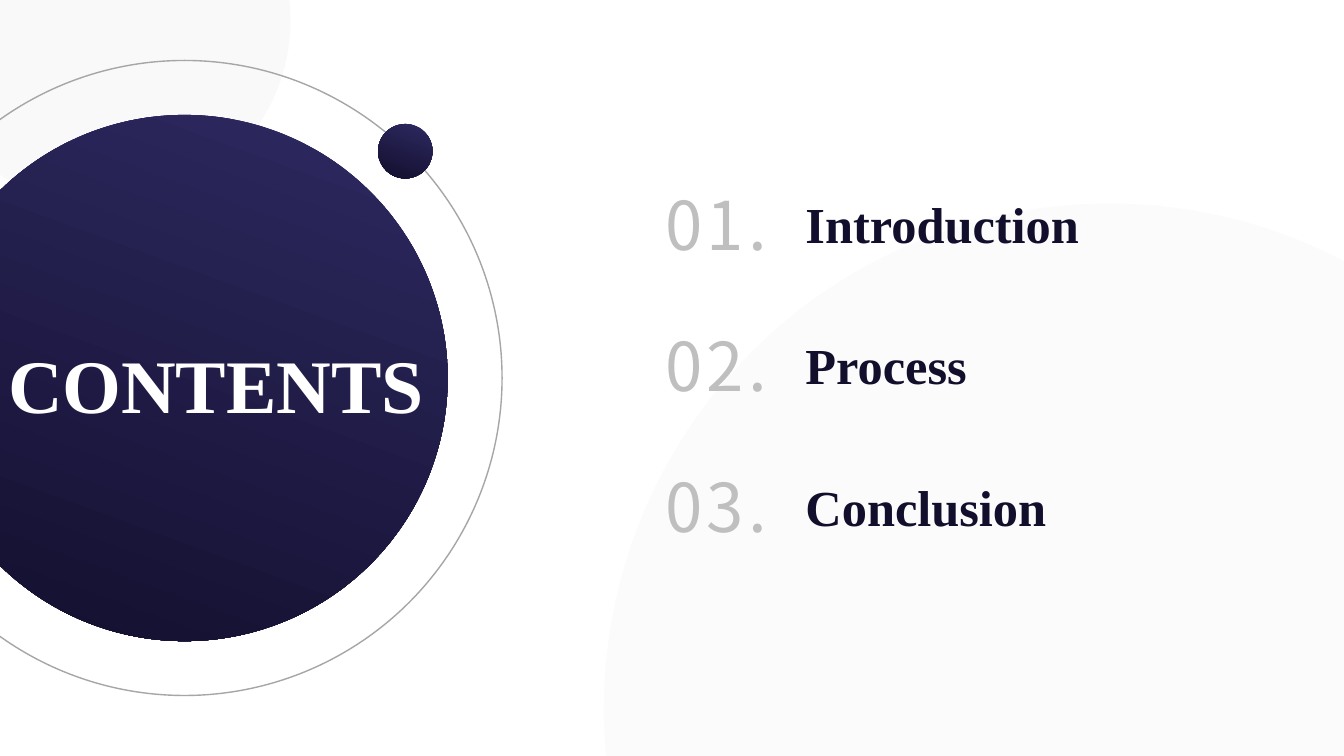
from dataclasses import dataclass

from lxml.etree import SubElement
from pptx import Presentation
from pptx.dml.color import RGBColor
from pptx.enum.shapes import MSO_SHAPE
from pptx.enum.text import MSO_AUTO_SIZE
from pptx.oxml.ns import qn
from pptx.util import Inches, Pt


@dataclass(frozen=True)
class Theme:
    """Colours, fonts and type sizes of the slide."""
    pale: str = "F2F2F2"
    light: str = "2E2961"
    dark: str = "120F2D"
    ring: str = "A6A6A6"
    number: str = "BFBFBF"
    white: str = "FFFFFF"
    serif: str = "Times New Roman"
    sans: str = "Noto Sans CJK SC"
    title: int = 54
    index: int = 48
    item: int = 36


THEME = Theme()


def add_disc(slide, left, top, size):
    """Add a bare circle without fill, line or shadow."""
    disc = slide.shapes.add_shape(
        MSO_SHAPE.OVAL, Inches(left), Inches(top), Inches(size), Inches(size))
    disc.shadow.inherit = False
    disc.fill.background()
    disc.line.fill.background()
    return disc


def add_tint(slide, left, top, size, alpha):
    """Add a pale circle with the given opacity in percent."""
    fill = add_disc(slide, left, top, size).fill
    fill.solid()
    fill.fore_color.rgb = RGBColor.from_string(THEME.pale)
    color = fill._xPr.find(qn("a:solidFill"))[0]
    SubElement(color, qn("a:alpha")).set("val", str(alpha * 1000))


def add_globe(slide, left, top, size):
    """Add a circle shaded from light to dark."""
    fill = add_disc(slide, left, top, size).fill
    fill.gradient()
    fill.gradient_angle = 250
    for stop, color in zip(fill.gradient_stops, (THEME.light, THEME.dark)):
        stop.color.rgb = RGBColor.from_string(color)


def add_label(slide, box, text, font, size, color, bold=True, inset=True):
    """Add one line of text in a box and return its run."""
    label = slide.shapes.add_textbox(*map(Inches, box))
    frame = label.text_frame
    frame.word_wrap = True
    frame.auto_size = MSO_AUTO_SIZE.SHAPE_TO_FIT_TEXT
    if not inset:
        frame.margin_left = frame.margin_right = 0
        frame.margin_top = frame.margin_bottom = 0
    frame.text = text
    run = frame.paragraphs[0].runs[0]
    run.font.name = font
    run.font.size = Pt(size)
    run.font.bold = bold
    run.font.color.rgb = RGBColor.from_string(color)
    return run


def add_backdrop(slide):
    """Add the two pale circles behind the content."""
    add_tint(slide, -0.81, -1.64, 3.69, 44)
    add_tint(slide, 5.99, 2.02, 10.03, 29)


def add_emblem(slide, left, top, size, title):
    """Add the ringed globe, its moon and the title in a square box."""
    gap = 0.54
    add_globe(slide, left + gap, top + gap, size - 2 * gap)
    ring = add_disc(slide, left, top, size)
    ring.line.color.rgb = RGBColor.from_string(THEME.ring)
    ring.line.width = Pt(1)
    add_globe(slide, left + 5.07, top + 0.63, gap)
    add_label(slide, (left + 1.4, top + 2.75, 4.3, 0.91), title,
              THEME.serif, THEME.title, THEME.white, inset=False)


def add_agenda(slide, left, top, pitch, items):
    """Add the numbered items, one row per pitch."""
    for place, item in enumerate(items):
        row = top + place * pitch
        run = add_label(slide, (left, row, 1.38, 0.91), f"{place + 1:02}.",
                        THEME.sans, THEME.index, THEME.number, bold=False)
        run.font._element.set("spc", "300")
        add_label(slide, (left + 1.39, row + 0.1, 3.24, 0.71), item,
                  THEME.serif, THEME.item, THEME.dark)


def main():
    """Build the contents slide and save it."""
    deck = Presentation()
    deck.slide_width = Inches(13.33)
    deck.slide_height = Inches(7.5)
    slide = deck.slides.add_slide(deck.slide_layouts[6])
    add_backdrop(slide)
    add_emblem(slide, -1.32, 0.6, 6.3, "CONTENTS")
    add_agenda(slide, 6.5, 1.77, 1.4,
               ("Introduction", "Process", "Conclusion"))
    deck.save("out.pptx")


if __name__ == "__main__":
    main()
